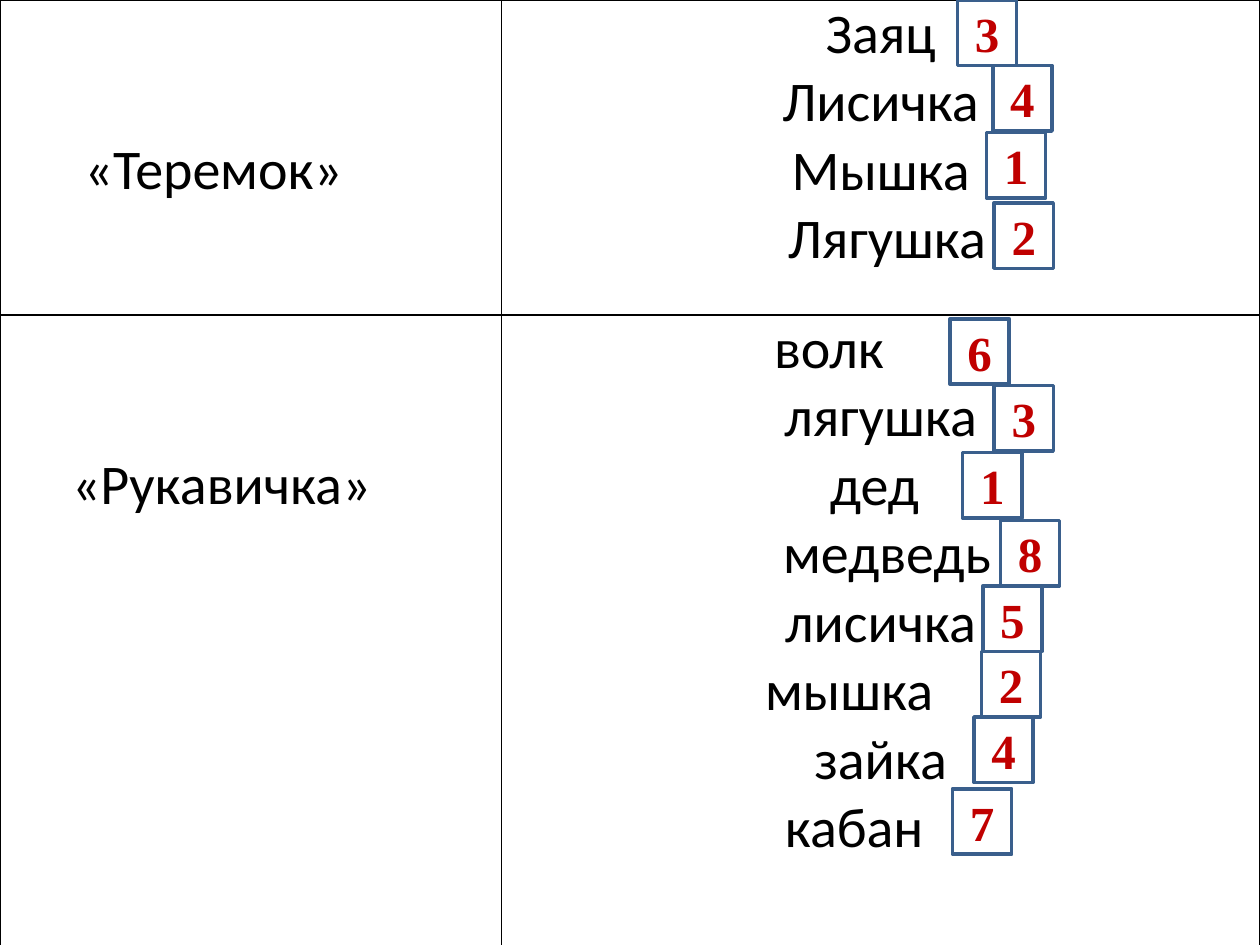
from pptx import Presentation
from pptx.dml.color import RGBColor
from pptx.enum.shapes import MSO_SHAPE
from pptx.enum.text import MSO_ANCHOR, PP_ALIGN
from pptx.oxml import parse_xml
from pptx.oxml.ns import nsdecls
from pptx.util import Inches, Pt

RECTANGLE = MSO_SHAPE.RECTANGLE
CENTER = PP_ALIGN.CENTER
MIDDLE = MSO_ANCHOR.MIDDLE

COLUMNS = (3.98, 6.02)
LINE_HEIGHT = 0.54
SIDE_MARGIN = 0.07
MAX_LEFT_SHIFT = 0.41
BADGE_WIDTH, BADGE_HEIGHT = 0.47, 0.52

# Tale: title, title indent, row height, heroes.
# Hero: name, shift from the column centre, order, badge left and top in the cell.
TALES = (
    ("«Теремок»", 0.6, 2.5, (
        ("Заяц", 0, "3", 3.62, 0),
        ("Лисичка", 0, "4", 3.9, 0.52),
        ("Мышка", 0, "1", 3.85, 1.05),
        ("Лягушка", 0.05, "2", 3.91, 1.61),
    )),
    ("«Рукавичка»", 0.5, 5.33, (
        ("волк", -0.41, "6", 3.56, 0.03),
        ("лягушка", 0, "3", 3.91, 0.56),
        ("дед", -0.05, "1", 3.66, 1.09),
        ("медведь", 0.05, "8", 3.96, 1.63),
        ("лисичка", 0, "5", 3.82, 2.15),
        ("мышка", -0.25, "2", 3.81, 2.67),
        ("зайка", 0, "4", 3.75, 3.19),
        ("кабан", -0.21, "7", 3.58, 3.76),
    )),
)


def color(value):
    return RGBColor.from_string(value)


def add_span(para, text, font, size, fill, bold=False):
    span = para.add_run()
    span.text = text
    span.font.name = font
    span.font.size = Pt(size)
    span.font.bold = bold
    span.font.color.rgb = color(fill)


def format_cell(cell):
    """Clear the fill, set the insets and draw thin black borders."""
    cell.margin_left = cell.margin_right = Inches(SIDE_MARGIN)
    cell.margin_top = cell.margin_bottom = 0
    properties = cell._tc.get_or_add_tcPr()
    for side in ("lnL", "lnR", "lnT", "lnB"):
        properties.append(parse_xml(
            f'<a:{side} {nsdecls("a")} w="{Pt(1)}"><a:solidFill>'
            f'<a:srgbClr val="000000"/></a:solidFill></a:{side}>'))
    cell.fill.background()


def fill_title(cell, title, indent):
    """Put the title on the third line of its cell."""
    format_cell(cell)
    cell.margin_top = Inches(2 * LINE_HEIGHT)
    cell.margin_left = Inches(SIDE_MARGIN + indent)
    add_span(cell.text_frame.paragraphs[0], title, "Calibri", 32, "000000")


def fill_heroes(cell, heroes):
    """List the names, each shifted from the centre by its own left margin."""
    format_cell(cell)
    cell.margin_right = Inches(SIDE_MARGIN + 2 * MAX_LEFT_SHIFT)
    frame = cell.text_frame
    for index, (name, shift, *_) in enumerate(heroes):
        para = frame.add_paragraph() if index else frame.paragraphs[0]
        para.alignment = CENTER
        margin = Inches(2 * (shift + MAX_LEFT_SHIFT))
        para._p.get_or_add_pPr().set("marL", str(margin))
        add_span(para, name, "Calibri", 32, "000000")


def add_badge(page, left, top, number):
    box = page.shapes.add_shape(RECTANGLE, Inches(left), Inches(top),
                                Inches(BADGE_WIDTH), Inches(BADGE_HEIGHT))
    box.shadow.inherit = False
    box.fill.solid()
    box.fill.fore_color.rgb = color("FFFFFF")
    box.line.color.rgb = color("3A5F8C")
    box.line.width = Pt(2)
    box.text_frame.vertical_anchor = MIDDLE
    para = box.text_frame.paragraphs[0]
    para.alignment = CENTER
    add_span(para, number, "Times New Roman", 28, "C00000", bold=True)


def add_tales_table(page, left, top):
    height = sum(tale[2] for tale in TALES)
    table = page.shapes.add_table(len(TALES), len(COLUMNS), Inches(left), Inches(top),
                                  Inches(sum(COLUMNS)), Inches(height)).table
    table.first_row = table.horz_banding = False
    for column, width in zip(table.columns, COLUMNS):
        column.width = Inches(width)
    for index, (title, indent, row_height, heroes) in enumerate(TALES):
        table.rows[index].height = Inches(row_height)
        fill_title(table.cell(index, 0), title, indent)
        fill_heroes(table.cell(index, 1), heroes)


def add_badges(page, left, top):
    """Number the heroes; left and top are those of the table."""
    for _, _, row_height, heroes in TALES:
        for _, _, number, badge_left, badge_top in heroes:
            add_badge(page, left + COLUMNS[0] + badge_left, top + badge_top, number)
        top += row_height


def main():
    deck = Presentation()
    deck.slide_width, deck.slide_height = Inches(10), Inches(7.5)
    page = deck.slides.add_slide(deck.slide_layouts[6])
    add_tales_table(page, 0, 0)
    add_badges(page, 0, 0)
    deck.save("out.pptx")


if __name__ == "__main__":
    main()
